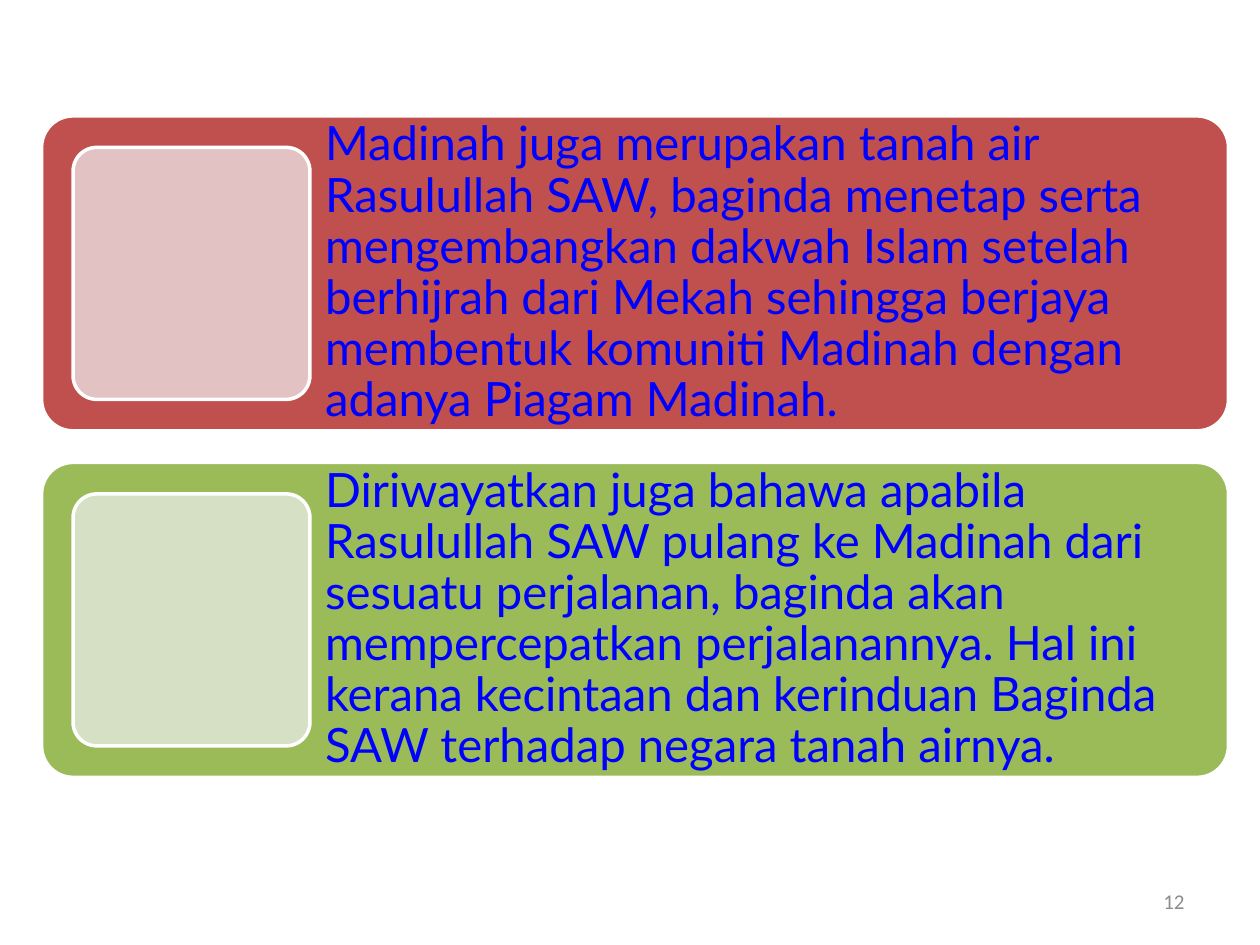
import pptx
import pptx.util
import pptx.dml.color
import pptx.enum.shapes
import pptx.enum.text

Inches = pptx.util.Inches
Pt = pptx.util.Pt
ALIGN = pptx.enum.text.PP_ALIGN

HUES = {
    "white": "FFFFFF",
    "red": "C0504D",
    "pink": "E2C2C2",
    "green": "9BBB59",
    "pale": "D5E0C4",
    "blue": "0000FF",
    "gray": "8C8C8C",
}


def hue(name):
    return pptx.dml.color.RGBColor.from_string(HUES[name])


def write(frame, text, font="Lato", size=27, color="blue",
          align=ALIGN.LEFT, space=1.0):
    para = frame.paragraphs[0]
    para.alignment = align
    para.line_spacing = space
    run = para.add_run()
    run.text = text
    run.font.name = font
    run.font.size = Pt(size)
    run.font.color.rgb = hue(color)


class Page:
    edge = "white"
    width = 2
    round = 0.1

    def __init__(self, deck):
        self.slide = deck.slides.add_slide(deck.slide_layouts[6])

    def panel(self, left, top, wide, high, fill):
        kind = pptx.enum.shapes.MSO_SHAPE.ROUNDED_RECTANGLE
        shape = self.slide.shapes.add_shape(
            kind, Inches(left), Inches(top), Inches(wide), Inches(high))
        shape.adjustments[0] = self.round
        shape.shadow.inherit = False
        shape.fill.solid()
        shape.fill.fore_color.rgb = hue(fill)
        shape.line.color.rgb = hue(self.edge)
        shape.line.width = Pt(self.width)

    def label(self, left, top, wide, high, text, pad=(0.1, 0.05), **form):
        box = self.slide.shapes.add_textbox(
            Inches(left), Inches(top), Inches(wide), Inches(high))
        frame = box.text_frame
        frame.word_wrap = True
        frame.vertical_anchor = pptx.enum.text.MSO_ANCHOR.MIDDLE
        frame.margin_left = frame.margin_right = Inches(pad[0])
        frame.margin_top = frame.margin_bottom = Inches(pad[1])
        write(frame, text, **form)


CARDS = [
    ("red", "pink",
     "Madinah juga merupakan tanah air Rasulullah SAW, baginda menetap serta "
     "mengembangkan dakwah Islam setelah berhijrah dari Mekah sehingga "
     "berjaya membentuk komuniti Madinah dengan adanya Piagam Madinah."),
    ("green", "pale",
     "Diriwayatkan juga bahawa apabila Rasulullah SAW pulang ke Madinah dari "
     "sesuatu perjalanan, baginda akan mempercepatkan perjalanannya. Hal ini "
     "kerana kecintaan dan kerinduan Baginda SAW terhadap negara tanah "
     "airnya."),
]


def main():
    deck = pptx.Presentation()
    deck.slide_width = Inches(10)
    deck.slide_height = Inches(7.5)
    page = Page(deck)

    # Slide number
    page.label(7.17, 6.95, 2.33, 0.4, "12", font="Calibri", size=12,
               color="gray", align=ALIGN.RIGHT)

    # Cards: panel, text and inset tile
    left, wide, high, inset = 0.33, 9.42, 2.5, 0.25
    start = 2.47
    for row, (fill, tint, text) in enumerate(CARDS):
        top = 0.92 + row * (high + inset)
        page.panel(left, top, wide, high, fill)
        page.label(start, top, left + wide - start, high, text,
                   pad=(0.11, 0.11), space=0.9)
        page.panel(left + inset, top + inset, 1.88, high - 2 * inset, tint)

    deck.save("out.pptx")


if __name__ == "__main__":
    main()
